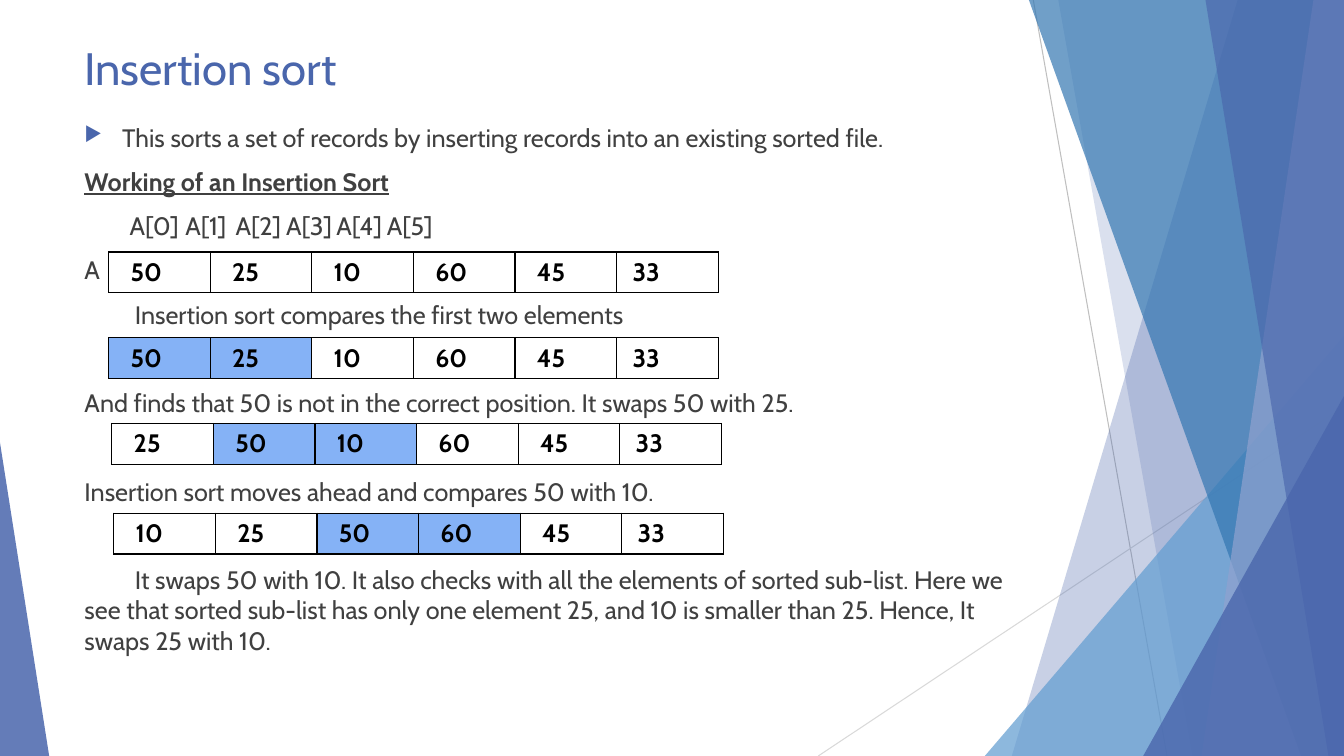
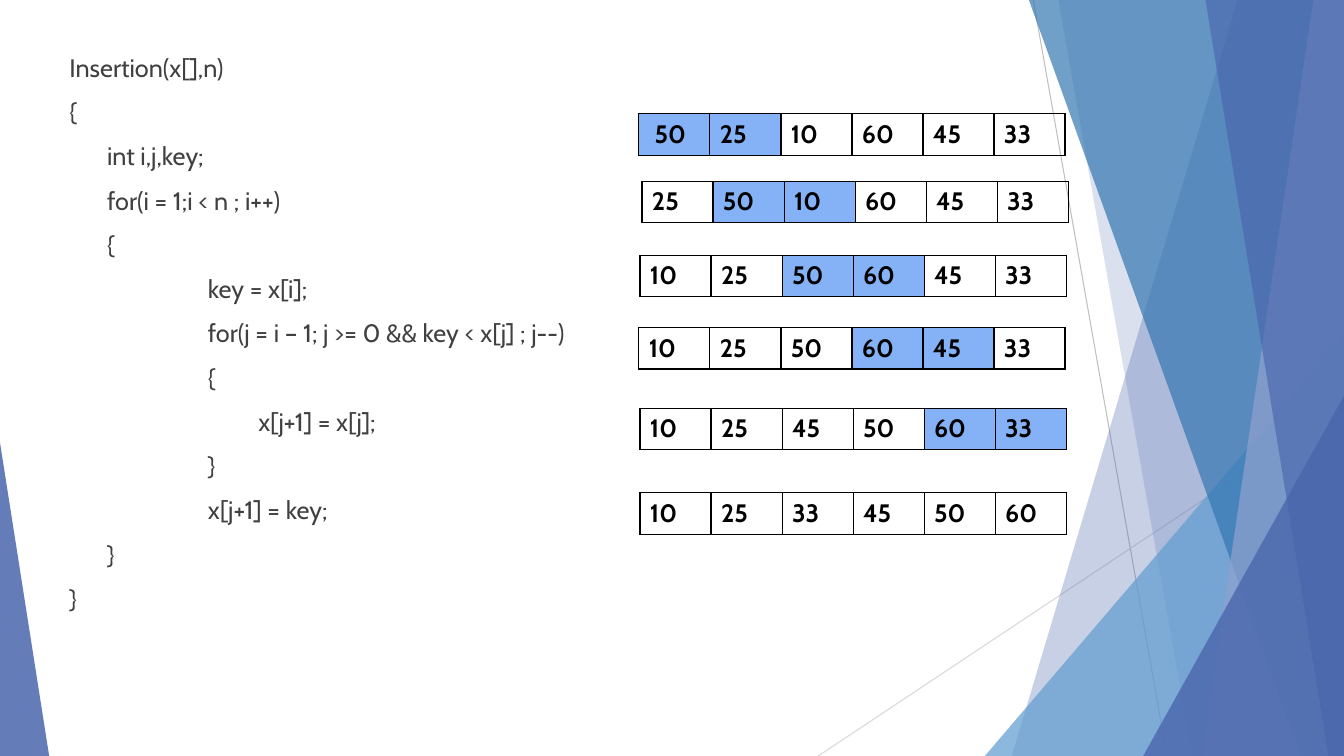
from dataclasses import dataclass

from lxml import etree
from pptx import Presentation
from pptx.dml.color import RGBColor
from pptx.enum.shapes import MSO_CONNECTOR, MSO_SHAPE
from pptx.oxml.ns import qn
from pptx.util import Cm, Pt

LINE = MSO_CONNECTOR.STRAIGHT
WEDGE = MSO_SHAPE.ISOSCELES_TRIANGLE
WIDE, HIGH = 33.87, 19.05


@dataclass(frozen=True)
class Theme:
    font: str = "Cabin"
    head: float = 32.4
    text: float = 18
    gap: float = 10
    skip: float = 41.6
    edge: float = 1
    hair: float = 0.75
    blue: str = "4A66AC"
    sky: str = "629DD1"
    sea: str = "3477B2"
    mist: str = "90A2CF"
    mark: str = "85B2F6"
    ink: str = "404040"
    black: str = "000000"
    grey: str = "BFBFBF"
    pale: str = "D9D9D9"


THEME = Theme()


def add(parent, tag, **attrs):
    node = etree.SubElement(parent, qn(tag))
    for name, value in attrs.items():
        node.set(name, str(value))
    return node


def style(para, size, color, bold=False, under=False):
    font = para.font
    font.name, font.size = THEME.font, Pt(size)
    font.bold, font.underline = bold, under
    font.color.rgb = RGBColor.from_string(color)


def tint(shape, color, alpha):
    shape.shadow.inherit = False
    shape.line.fill.background()
    shape.fill.solid()
    shape.fill.fore_color.rgb = RGBColor.from_string(color)
    node = shape.fill._xPr.find(".//" + qn("a:srgbClr"))
    add(node, "a:alpha", val=alpha * 1000)


def ray(slide, start, end, color):
    line = slide.shapes.add_connector(LINE, *map(Cm, start + end))
    line.line.color.rgb = RGBColor.from_string(color)
    line.line.width = Pt(THEME.hair)
    add(line.element.spPr, "a:effectLst")


def facet(slide, top, base, color, alpha):
    form = slide.shapes.build_freeform(Cm(top), 0, scale=1.0)
    ends = [(WIDE, 0), (WIDE, HIGH), (base, HIGH)]
    form.add_line_segments([(Cm(x), Cm(y)) for x, y in ends], close=True)
    tint(form.convert_to_shape(), color, alpha)


def wedge(slide, left, top, width, peak, color, alpha):
    shape = slide.shapes.add_shape(
        WEDGE, Cm(left), Cm(top), Cm(width), Cm(HIGH - top))
    shape.adjustments[0] = peak
    tint(shape, color, alpha)


def decor(slide):
    ray(slide, (26.04, 0), (29.41, HIGH), THEME.grey)
    ray(slide, (WIDE, 10.24), (20.62, HIGH), THEME.pale)
    facet(slide, 31.19, 25.5, THEME.blue, 30)
    facet(slide, 26.67, 30.05, THEME.blue, 20)
    wedge(slide, 24.82, 8.46, WIDE - 24.82, 1, THEME.sky, 72)
    facet(slide, 25.93, 32.79, THEME.sea, 70)
    facet(slide, 33.1, 30.28, THEME.mist, 70)
    facet(slide, 30.38, 33.48, THEME.blue, 65)
    wedge(slide, 28.81, 9.98, WIDE - 28.81, 1, THEME.blue, 80)
    wedge(slide, 0, 11.15, 1.24, 0, THEME.blue, 85)


def share(slide, layout):
    for holder in list(layout.placeholders):
        layout.shapes.element.remove(holder.element)
    decor(slide)
    for shape in list(slide.shapes):
        layout.shapes.element.append(shape.element)


def box(slide, left, top, width, height):
    shape = slide.shapes.add_textbox(*map(Cm, (left, top, width, height)))
    shape.text_frame.word_wrap = True
    return shape.text_frame


def title(slide, text):
    para = box(slide, 1.88, 0.89, 27.94, 1.37).paragraphs[0]
    para.text = text
    style(para, THEME.head, THEME.blue)


def write(frame, text, left=0, first=0, before=THEME.gap, bullet=False,
          tabs=(), bold=False, under=False):
    para = frame.paragraphs[0]
    if para.runs:
        para = frame.add_paragraph()
    para.text = text
    props = para._p.get_or_add_pPr()
    props.set("marL", str(Cm(left)))
    props.set("indent", str(Cm(first)))
    if bullet:
        add(add(props, "a:buClr"), "a:srgbClr", val=THEME.blue)
        add(props, "a:buSzPct", val=80000)
        add(props, "a:buChar", char="▶")
    if tabs:
        stops = add(props, "a:tabLst")
        for tab in tabs:
            add(stops, "a:tab", pos=Cm(tab), algn="l")
    para.space_before = Pt(before)
    style(para, THEME.text, THEME.ink, bold, under)
    return para


def frame_cell(cell):
    props = cell._tc.get_or_add_tcPr()
    for side in ("a:lnL", "a:lnR", "a:lnT", "a:lnB"):
        line = add(props, side, w=Pt(THEME.edge))
        add(add(line, "a:solidFill"), "a:srgbClr", val=THEME.black)


def array(slide, left, top, step, height, values, marked, pads):
    count = len(values)
    table = slide.shapes.add_table(
        1, count, Cm(left), Cm(top), Cm(step * count), Cm(height)).table
    table.first_row = table.horz_banding = False
    table.rows[0].height = Cm(height)
    for i, (value, pad) in enumerate(zip(values, pads)):
        table.columns[i].width = Cm(step)
        cell = table.cell(0, i)
        cell.text = str(value)
        cell.margin_left = Cm(pad)
        style(cell.text_frame.paragraphs[0], THEME.text, THEME.black, True)
        frame_cell(cell)
        if i in marked:
            cell.fill.solid()
            cell.fill.fore_color.rgb = RGBColor.from_string(THEME.mark)
        else:
            cell.fill.background()


def steps(slide):
    title(slide, "Insertion sort")
    body = box(slide, 1.88, 2.95, 23.88, 16.1)
    write(body, "This sorts a set of records by inserting records into an "
          "existing sorted file.", left=0.95, first=-0.95, bullet=True)
    write(body, "Working of an Insertion Sort", bold=True, under=True)
    write(body, "\t".join(f"A[{i}]" for i in range(6)), first=1.14,
          tabs=[2.54 * i for i in range(1, 6)])
    stem = write(body, "A", tabs=[0.8]).add_run()
    stem.text = "\t"
    stem.font.bold = stem.font.underline = True
    write(body, "Insertion sort compares the first two elements", first=1.27)
    write(body, "And finds that 50 is not in the correct position. "
          "It swaps 50 with 25.", before=THEME.skip)
    write(body, "Insertion sort moves ahead and compares 50 with 10.",
          before=THEME.skip)
    write(body, "It swaps 50 with 10. It also checks with all the elements "
          "of sorted sub-list. Here we see that sorted sub-list has only one "
          "element 25, and 10 is smaller than 25. Hence, It swaps 25 with 10.",
          first=1.27, before=THEME.skip)
    pads = [0.55] * 5 + [0.4]
    for left, top, values, marked in (
            (2.74, 6.35, (50, 25, 10, 60, 45, 33), ()),
            (2.74, 8.51, (50, 25, 10, 60, 45, 33), (0, 1)),
            (2.82, 10.67, (25, 50, 10, 60, 45, 33), (1, 2)),
            (2.87, 12.93, (10, 25, 50, 60, 45, 33), (2, 3))):
        array(slide, left, top, 2.56, 1.03, values, marked, pads)


def code(slide):
    body = box(slide, 1.5, 1.19, 24.87, 16.76)
    insets = (0, 0.95, 3.49, 4.76)
    for depth, text in (
            (0, "Insertion(x[],n)"),
            (0, "{"),
            (1, "int i,j,key;"),
            (1, "for(i = 1;i < n ; i++)"),
            (1, "{"),
            (2, "key = x[i];"),
            (2, "for(j = i – 1; j >= 0 && key < x[j] ; j--)"),
            (2, "{"),
            (3, "x[j+1] = x[j];"),
            (2, "}"),
            (2, "x[j+1] = key;"),
            (1, "}"),
            (0, "}")):
        write(body, text, left=insets[depth])
    pads = [0.25] * 6
    for left, top, values, marked, inset in (
            (16.1, 2.87, (50, 25, 10, 60, 45, 33), (0, 1), 0.4),
            (16.18, 4.57, (25, 50, 10, 60, 45, 33), (1, 2), 0.25),
            (16.13, 6.43, (10, 25, 50, 60, 45, 33), (2, 3), 0.25),
            (16.1, 8.26, (10, 25, 50, 60, 45, 33), (3, 4), 0.25),
            (16.13, 10.29, (10, 25, 45, 50, 60, 33), (4, 5), 0.25),
            (16.13, 12.42, (10, 25, 33, 45, 50, 60), (), 0.25)):
        array(slide, left, top, 1.79, 1.04, values, marked,
              [inset] + pads[1:])


def main():
    deck = Presentation()
    deck.slide_width, deck.slide_height = Cm(WIDE), Cm(HIGH)
    blank = deck.slide_layouts[6]
    first = deck.slides.add_slide(blank)
    share(first, blank)
    steps(first)
    code(deck.slides.add_slide(blank))
    deck.save("out.pptx")


if __name__ == "__main__":
    main()
